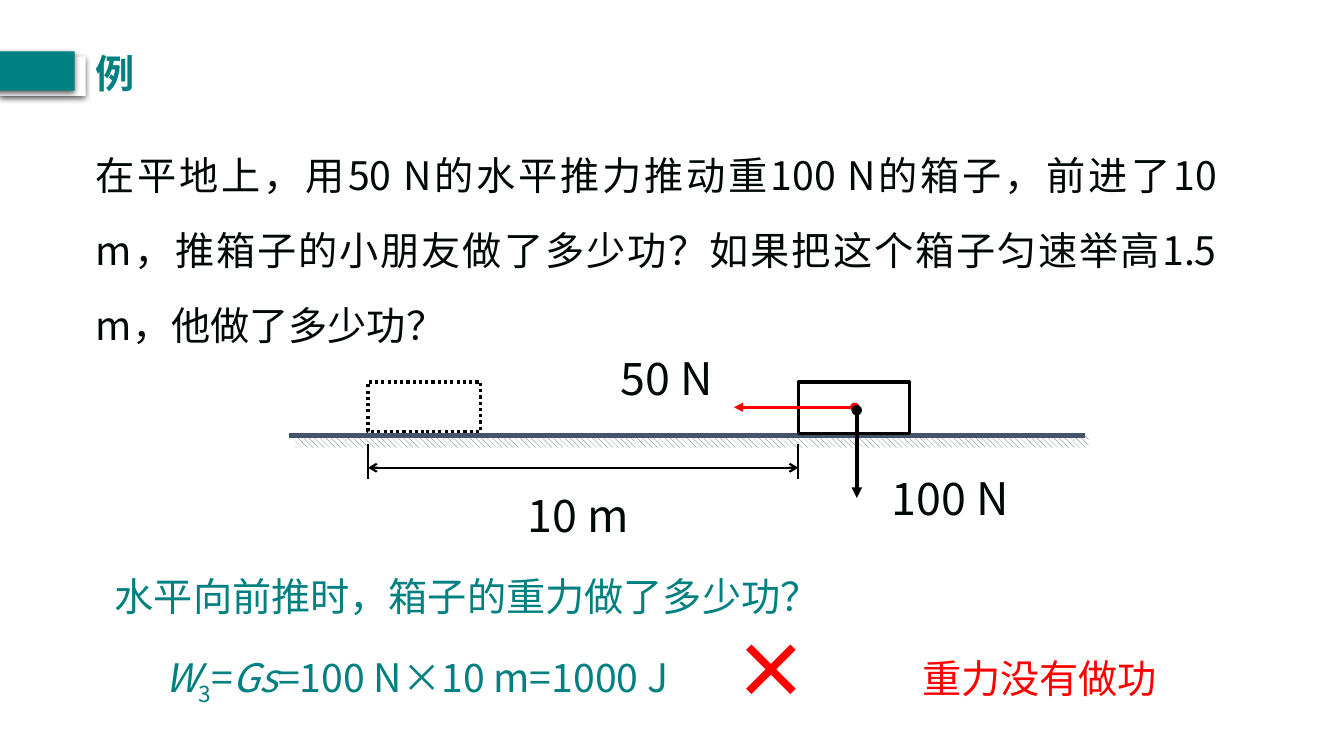
import pptx
import pptx.dml.color
import pptx.enum.dml
import pptx.enum.shapes
import pptx.enum.text
import pptx.oxml.ns
import pptx.util
from lxml import etree

RGBColor = pptx.dml.color.RGBColor
TEAL = RGBColor(0x00, 0x80, 0x80)
INK = RGBColor(0x00, 0x08, 0x08)
BLACK = RGBColor(0x00, 0x00, 0x00)
RED = RGBColor(0xFF, 0x00, 0x00)
SLATE = RGBColor(0x44, 0x54, 0x6A)
WHITE = RGBColor(0xFF, 0xFF, 0xFF)

FONT = "Noto Sans CJK SC"
WIDTH = pptx.util.Inches(13.33)
HEIGHT = pptx.util.Inches(7.5)

START_X, END_X = 27.38, 59.4  # left edges of the box before and after the push
GROUND_Y, BOX_Y = 57.6, 50.53
TICK_TOP, TICK_BOTTOM = 58.67, 63.33
DISTANCE_Y = 61.87


def across(share):
    """Length for a percentage of the slide's width."""
    return round(WIDTH * share / 100)


def down(share):
    """Length for a percentage of the slide's height."""
    return round(HEIGHT * share / 100)


def frame(left, top, width, height):
    return across(left), down(top), across(width), down(height)


def apply(target, values):
    for name, value in values.items():
        setattr(target, name, value)


def add_child(parent, tag, **attributes):
    return etree.SubElement(parent, pptx.oxml.ns.qn(tag), attributes)


def write_text(shape, runs, color, size=28, spacing=1.0, wrap=True, bold=False,
               alignment=pptx.enum.text.PP_ALIGN.LEFT, margins=None):
    """Write one paragraph; runs are pairs of text and extra font values."""
    text_frame = shape.text_frame
    apply(text_frame, {
        "word_wrap": wrap,
        "auto_size": pptx.enum.text.MSO_AUTO_SIZE.SHAPE_TO_FIT_TEXT,
        "vertical_anchor": pptx.enum.text.MSO_ANCHOR.TOP,
        **(margins or {}),
    })
    paragraph = text_frame.paragraphs[0]
    apply(paragraph, {"alignment": alignment, "line_spacing": spacing,
                      "space_before": pptx.util.Pt(0)})
    for text, values in runs:
        run = paragraph.add_run()
        run.text = text
        apply(run.font, {"name": FONT, "size": pptx.util.Pt(size), "bold": bold,
                         "italic": values.get("italic", False)})
        run.font.color.rgb = color
        properties = run.font._element
        if "baseline" in values:
            properties.set("baseline", values["baseline"])
        latin = properties.find(pptx.oxml.ns.qn("a:latin"))
        latin.addnext(latin.makeelement(pptx.oxml.ns.qn("a:ea"), {"typeface": FONT}))
    return paragraph


def fill_placeholder(placeholder, area, text, color, **values):
    position = dict(zip(("left", "top", "width", "height"), frame(*area)))
    apply(placeholder, position)
    return write_text(placeholder, [(text, {})], color, **values)


def add_label(slide, area, runs, color, **values):
    if isinstance(runs, str):
        runs = [(runs, {})]
    write_text(slide.shapes.add_textbox(*frame(*area)), runs, color, **values)


def add_rectangle(slide, area):
    shape = slide.shapes.add_shape(
        pptx.enum.shapes.MSO_SHAPE.RECTANGLE, *frame(*area))
    shape.shadow.inherit = False
    shape.fill.background()
    shape.line.fill.background()
    return shape


def add_box(slide, area, dash=None):
    shape = add_rectangle(slide, area)
    shape.line.color.rgb = BLACK
    apply(shape.line, {"width": pptx.util.Pt(2.25), "dash_style": dash})


def add_tab(slide, area, color):
    """Add a filled marker with a soft shadow below it."""
    shape = add_rectangle(slide, area)
    shape.fill.solid()
    shape.fill.fore_color.rgb = color
    effects = shape._element.spPr.find(pptx.oxml.ns.qn("a:effectLst"))
    shadow = add_child(effects, "a:outerShdw", blurRad=str(pptx.util.Pt(4.5)),
                       dist=str(pptx.util.Pt(1.5)), dir="5400000",
                       algn="ctr", rotWithShape="0")
    shade = add_child(shadow, "a:srgbClr", val=str(BLACK))
    add_child(shade, "a:alpha", val="63000")


def add_line(slide, start, end, color, weight, head=None, tail=None):
    connector = slide.shapes.add_connector(
        pptx.enum.shapes.MSO_CONNECTOR.STRAIGHT,
        across(start[0]), down(start[1]), across(end[0]), down(end[1]))
    connector.line.color.rgb = color
    connector.line.width = pptx.util.Pt(weight)
    properties = connector._element.spPr
    outline = properties.find(pptx.oxml.ns.qn("a:ln"))
    for tag, kind in (("a:headEnd", head), ("a:tailEnd", tail)):
        if kind:
            add_child(outline, tag, type=kind)
    add_child(properties, "a:effectLst")


def add_heading_and_problem(slide):
    add_tab(slide, (0, 7.47, 6.38, 5.2), WHITE)
    add_tab(slide, (-0.83, 6.8, 6.38, 5.2), TEAL)
    fill_placeholder(slide.shapes.title, (6.38, 5.87, 28.05, 7.6), "例", TEAL, bold=True)
    problem = fill_placeholder(
        slide.placeholders[1], (6.38, 15.6, 84.9, 31.47),
        "在平地上，用50 N的水平推力推动重100 N的箱子，前进了10 m，"
        "推箱子的小朋友做了多少功？如果把这个箱子匀速举高1.5 m，他做了多少功？",
        INK, spacing=1.6, alignment=pptx.enum.text.PP_ALIGN.JUSTIFY)
    properties = problem._element.get_or_add_pPr()
    properties.set("marL", "0")
    properties.set("indent", "0")
    add_child(properties, "a:buNone")


def add_ground(slide):
    hatching = add_rectangle(slide, (21.98, GROUND_Y, 59.03, 1.6))
    hatching.fill.patterned()
    hatching.fill.pattern = pptx.enum.dml.MSO_PATTERN.WIDE_DOWNWARD_DIAGONAL
    hatching.fill.fore_color.rgb = SLATE
    hatching.fill.back_color.rgb = WHITE
    add_line(slide, (21.53, GROUND_Y), (80.7, GROUND_Y), SLATE, 3)


def add_diagram(slide):
    add_ground(slide)
    add_box(slide, (START_X, BOX_Y, 8.4, 6.53), pptx.enum.dml.MSO_LINE.ROUND_DOT)
    add_box(slide, (END_X, BOX_Y, 8.25, 6.8))
    add_line(slide, (63.6, 53.87), (54.6, 53.87), RED, 2.25, "oval", "triangle")
    add_line(slide, (63.75, 54.27), (63.75, 65.87), BLACK, 2.5, "oval", "triangle")
    for edge in (START_X, END_X):
        add_line(slide, (edge, TICK_TOP), (edge, TICK_BOTTOM), BLACK, 1.5)
    add_line(slide, (START_X, DISTANCE_Y), (END_X, DISTANCE_Y), BLACK, 1.5,
             "arrow", "arrow")
    add_label(slide, (45.45, 45.73, 9.23, 8.53), "50 N", INK, size=32, wrap=False)
    add_label(slide, (65.63, 61.6, 11.03, 8.53), "100 N", INK, size=32, wrap=False)
    add_label(slide, (38.55, 65.87, 11.63, 5.73), "10 m", INK, size=32, spacing=0.8,
              margins={"margin_top": 0, "margin_bottom": 0})


def add_discussion(slide):
    add_label(slide, (7.8, 72.53, 58.05, 10.13),
              "水平向前推时，箱子的重力做了多少功？", TEAL, spacing=1.4)
    formula = [("W", {"italic": True}), ("3", {"baseline": "-25000"}), ("=", {}),
               ("Gs", {"italic": True}), ("=100 N×10 m=1000 J", {})]
    add_label(slide, (11.48, 84.4, 52.35, 8.27), formula, TEAL, spacing=1.2)
    add_label(slide, (67.88, 83.47, 19.95, 10.13), "重力没有做功", RED, spacing=1.4)
    add_label(slide, (53.85, 81.73, 6.45, 13.47), "×", RED, size=54, bold=True)


def main():
    presentation = pptx.Presentation()
    apply(presentation, {"slide_width": WIDTH, "slide_height": HEIGHT})
    slide = presentation.slides.add_slide(presentation.slide_layouts[1])
    add_heading_and_problem(slide)
    add_diagram(slide)
    add_discussion(slide)
    presentation.save("out.pptx")


if __name__ == "__main__":
    main()
